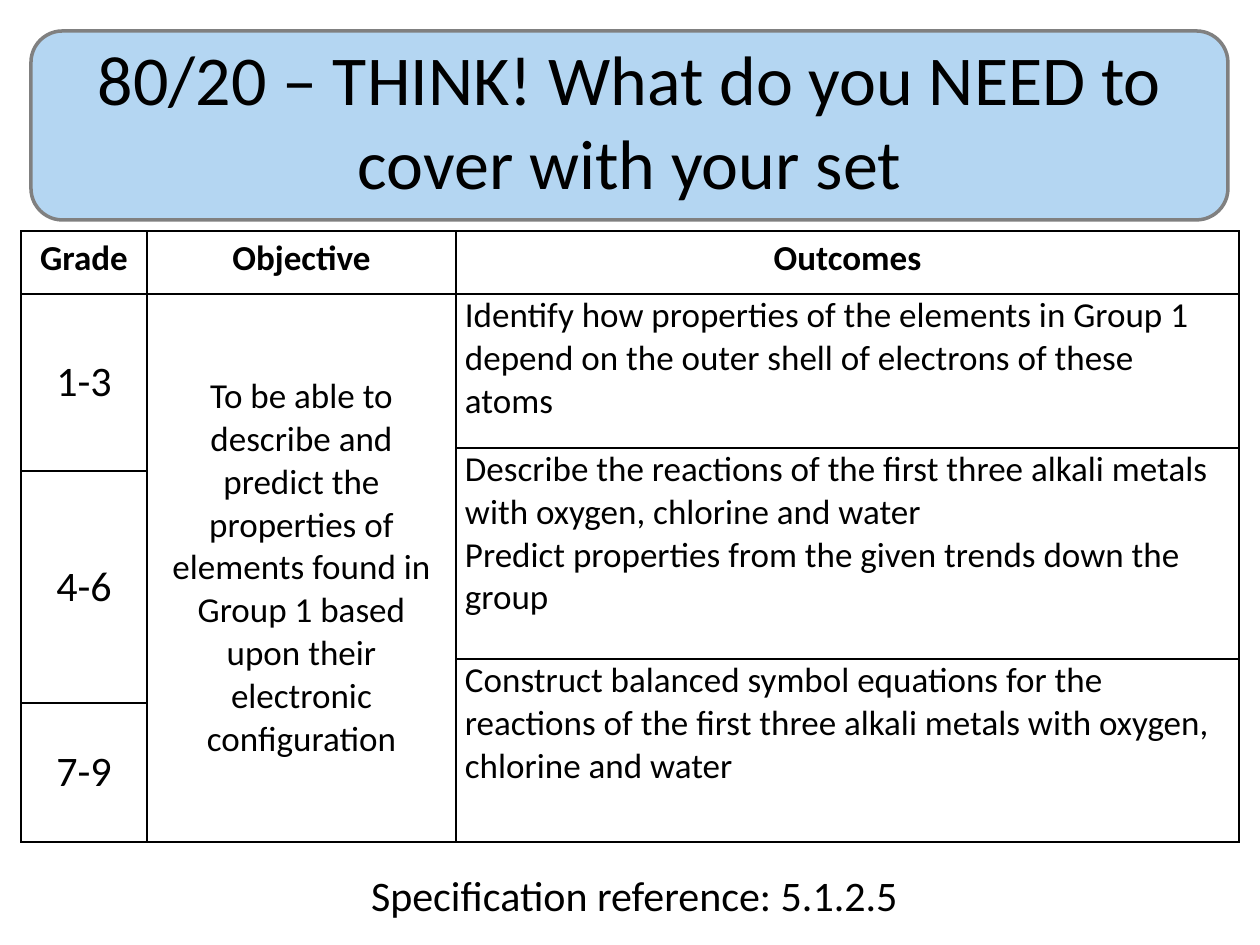
from lxml.etree import SubElement
from pptx import Presentation
from pptx.dml.color import RGBColor
from pptx.enum.shapes import MSO_SHAPE as SHAPE
from pptx.enum.text import MSO_ANCHOR as ANCHOR, PP_ALIGN as ALIGN
from pptx.oxml.ns import qn
from pptx.util import Emu, Pt

BLACK = RGBColor(0x00, 0x00, 0x00)
WHITE = RGBColor(0xFF, 0xFF, 0xFF)
BLUE = RGBColor(0xB4, 0xD6, 0xF2)
GREY = RGBColor(0x80, 0x80, 0x80)
FONT = "Calibri"

TITLE = "80/20 – THINK! What do you NEED to cover with your set"
REFERENCE = "Specification reference: 5.1.2.5"
HEADERS = ["Grade", "Objective", "Outcomes"]
OBJECTIVE = ("To be able to describe and predict the properties of elements "
             "found in Group 1 based upon their electronic configuration")
# (first row, rows spanned, text)
GRADES = [(1, 2, "1-3"), (3, 2, "4-6"), (5, 1, "7-9")]
OUTCOMES = [
    (1, 1, "Identify how properties of the elements in Group 1 depend on the "
           "outer shell of electrons of these atoms"),
    (2, 2, "Describe the reactions of the first three alkali metals with oxygen, "
           "chlorine and water\n"
           "Predict properties from the given trends down the group"),
    (4, 2, "Construct balanced symbol equations for the reactions of the first "
           "three alkali metals with oxygen, chlorine and water"),
]
COL_WIDTHS = [126, 309, 783]
ROW_HEIGHTS = [63, 154, 23, 188, 44, 139]


def px(n):
    return Emu(n * 914400 // 126)


def box(x, y, w, h):
    return px(x), px(y), px(w), px(h)


def write(tf, text, size, align=ALIGN.CENTER, bold=False):
    tf.text = text
    tf.word_wrap = True
    for p in tf.paragraphs:
        p.alignment = align
        p.font.name, p.font.size, p.font.bold = FONT, Pt(size), bold
        p.font.color.rgb = BLACK


def format_empty(cell):
    """Fill and border a cell, with no margins and tiny text so that rows keep their height."""
    cell.fill.solid()
    cell.fill.fore_color.rgb = WHITE
    cell.margin_left = cell.margin_right = cell.margin_top = cell.margin_bottom = 0
    end = cell.text_frame.paragraphs[0]._p.get_or_add_endParaRPr()
    end.set("sz", "100")
    tcPr = cell._tc.get_or_add_tcPr()
    for i, side in enumerate(("lnL", "lnR", "lnT", "lnB")):
        ln = tcPr.makeelement(qn(f"a:{side}"), {"w": str(Pt(1))})
        fill = SubElement(ln, qn("a:solidFill"))
        SubElement(fill, qn("a:srgbClr"), val=str(BLACK))
        tcPr.insert(i, ln)


def fill_cell(table, row, col, span, text, size, margins=(13, 6),
              anchor=ANCHOR.MIDDLE, **style):
    cell = table.cell(row, col)
    if span > 1:
        cell.merge(table.cell(row + span - 1, col))
    cell.margin_left = cell.margin_right = px(margins[0])
    cell.margin_top = cell.margin_bottom = px(margins[1])
    cell.vertical_anchor = anchor
    write(cell.text_frame, text, size, **style)


prs = Presentation()
prs.slide_width, prs.slide_height = px(1260), px(945)
slide = prs.slides.add_slide(prs.slide_layouts[5])
shapes = slide.shapes

title = shapes.title
title.left, title.top, title.width, title.height = box(31, 18, 1197, 203)
write(title.text_frame, TITLE, 40)
title.text_frame.vertical_anchor = ANCHOR.MIDDLE

panel = shapes.add_shape(SHAPE.ROUNDED_RECTANGLE, *box(31, 31, 1197, 189))
panel.shadow.inherit = False
panel.fill.solid()
panel.fill.fore_color.rgb = BLUE
panel.line.color.rgb = GREY
panel.line.width = Pt(2)
title._element.addprevious(panel._element)  # behind the title

reference = shapes.add_textbox(*box(31, 863, 1207, 63))
write(reference.text_frame, REFERENCE, 24)

table = shapes.add_table(len(ROW_HEIGHTS), len(COL_WIDTHS),
                         *box(21, 231, sum(COL_WIDTHS), sum(ROW_HEIGHTS))).table
table.first_row = table.horz_banding = False
for col, width in zip(table.columns, COL_WIDTHS):
    col.width = px(width)
for row, height in zip(table.rows, ROW_HEIGHTS):
    row.height = px(height)
for cell in table.iter_cells():
    format_empty(cell)

for col, text in enumerate(HEADERS):
    fill_cell(table, 0, col, 1, text, 20, anchor=ANCHOR.TOP, bold=True)
for row, span, text in GRADES:
    fill_cell(table, row, 0, span, text, 24)
fill_cell(table, 1, 1, 5, OBJECTIVE, 20)
for row, span, text in OUTCOMES:
    fill_cell(table, row, 2, span, text, 20, margins=(9, 0),
              anchor=ANCHOR.TOP, align=ALIGN.LEFT)

prs.save("out.pptx")
